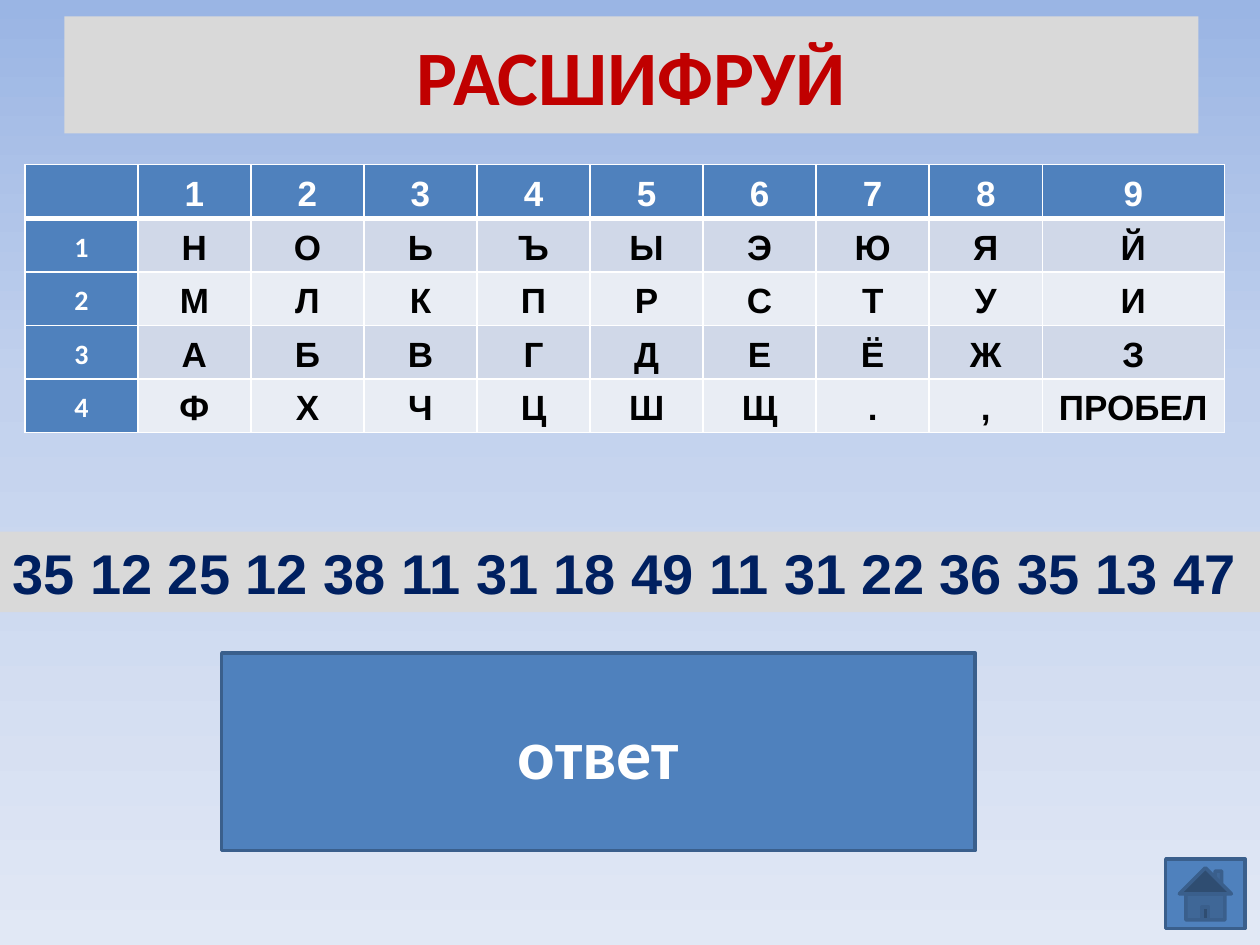
from copy import deepcopy

from lxml.etree import SubElement
from pptx import Presentation
from pptx.dml.color import RGBColor
from pptx.enum.shapes import MSO_SHAPE as Preset
from pptx.enum.text import MSO_ANCHOR as Anchor, PP_ALIGN as Align
from pptx.oxml.ns import qn
from pptx.util import Cm, Pt

BLUE, DARK_BLUE, GREY, WHITE = "4F81BD", "3A5F8C", "D9D9D9", "FFFFFF"
BANDS = ("D0D8E8", "E9EDF4")
CIPHER_ROWS = ("НОЬЪЫЭЮЯЙ", "МЛКПРСТУИ", "АБВГДЕЁЖЗ", ("Ф", "Х", "Ч", "Ц", "Ш", "Щ", ".", ",", "ПРОБЕЛ"))
CODE = "35 12 25 12 38 11 31 18 49 11 31 22 36 35 13 47"


def paint(color_format, value):
    color_format.rgb = RGBColor.from_string(value)


def fill_solid(item, color):
    item.fill.solid()
    paint(item.fill.fore_color, color)


def write(frame, text, size, color, font="Calibri", align=Align.CENTER):
    paragraph = frame.paragraphs[0]
    paragraph.alignment = align
    run = paragraph.add_run()
    run.text = text
    run.font.size = Pt(size)
    run.font.name = font
    run.font.bold = True
    paint(run.font.color, color)
    return paragraph


def set_background(slide, stops):
    """Fill the slide from top to bottom with (position, colour) stops."""
    fill = slide.background.fill
    fill.gradient()
    fill.gradient_angle = 270
    stop_list = slide.element.find(".//" + qn("a:gsLst"))
    while len(stop_list) < len(stops):
        stop_list.append(deepcopy(stop_list[0]))
    for stop, (position, color) in zip(fill.gradient_stops, stops):
        stop.position = position
        paint(stop.color, color)


def add_title(slide, text):
    title = slide.shapes.title
    title.left, title.top, title.width, title.height = Cm(1.3), Cm(0.33), Cm(22.86), Cm(2.36)
    fill_solid(title, GREY)
    title.text_frame.vertical_anchor = Anchor.MIDDLE
    write(title.text_frame, text, 44, "C00000")


def add_box(slide, preset, left, top, width, height, fill, outline=None):
    shape = slide.shapes.add_shape(preset, Cm(left), Cm(top), Cm(width), Cm(height))
    shape.shadow.inherit = False
    fill_solid(shape, fill)
    if outline:
        paint(shape.line.color, outline)
        shape.line.width = Pt(2)
    else:
        shape.line.fill.background()
    return shape


def set_borders(cell, top, bottom):
    """Draw white borders; top and bottom are widths in points."""
    properties = cell._tc.get_or_add_tcPr()
    widths = {"a:lnL": 1, "a:lnR": 1, "a:lnT": top, "a:lnB": bottom}
    for name, width in widths.items():
        line = SubElement(properties, qn(name), w=str(Pt(width)))
        fill = SubElement(line, qn("a:solidFill"))
        SubElement(fill, qn("a:srgbClr"), val=WHITE)


def format_cell(cell, row, column, text):
    set_borders(cell, top=3 if row == 1 else 1, bottom=3 if row == 0 else 1)
    is_header = row == 0 or column == 0
    fill_solid(cell, BLUE if is_header else BANDS[(row - 1) % 2])
    cell.vertical_anchor = Anchor.MIDDLE
    cell.margin_left = cell.margin_right = Cm(0.18)
    cell.margin_top = cell.margin_bottom = 0
    if text:
        size, font = (16, "Calibri") if column == 0 else (20, "Arial")
        paragraph = write(cell.text_frame, text, size, WHITE if is_header else "000000", font)
        paragraph.line_spacing = 1.15


def add_cipher_table(slide):
    rows = [["", *"123456789"]]
    rows += [[str(number), *letters] for number, letters in enumerate(CIPHER_ROWS, 1)]
    table = slide.shapes.add_table(
        len(rows), len(rows[0]), Cm(0.5), Cm(3.32), Cm(24.2), Cm(5.4)).table
    for column in table.columns:
        column.width = Cm(2.28)
    table.columns[len(rows[0]) - 1].width = Cm(3.67)
    for row, texts in enumerate(rows):
        table.rows[row].height = Cm(1.08)
        for column, text in enumerate(texts):
            format_cell(table.cell(row, column), row, column, text)


def main():
    presentation = Presentation()
    presentation.slide_width, presentation.slide_height = Cm(25.4), Cm(19.05)
    slide = presentation.slides.add_slide(presentation.slide_layouts[5])
    set_background(slide, [(0, "9AB5E4"), (0.41, "C2D1ED"), (1, "E1E8F5")])
    add_title(slide, "РАСШИФРУЙ")
    add_cipher_table(slide)
    code = add_box(slide, Preset.RECTANGLE, 0, 10.72, 25.4, 1.62, GREY)
    write(code.text_frame, CODE, 32, "002060", "Arial", Align.LEFT)
    answer = add_box(slide, Preset.RECTANGLE, 4.47, 13.16, 15.19, 3.99, BLUE, DARK_BLUE)
    write(answer.text_frame, "ответ", 40, WHITE)
    add_box(slide, Preset.ACTION_BUTTON_HOME, 23.5, 17.32, 1.6, 1.4, BLUE, DARK_BLUE)
    presentation.save("out.pptx")


if __name__ == "__main__":
    main()
